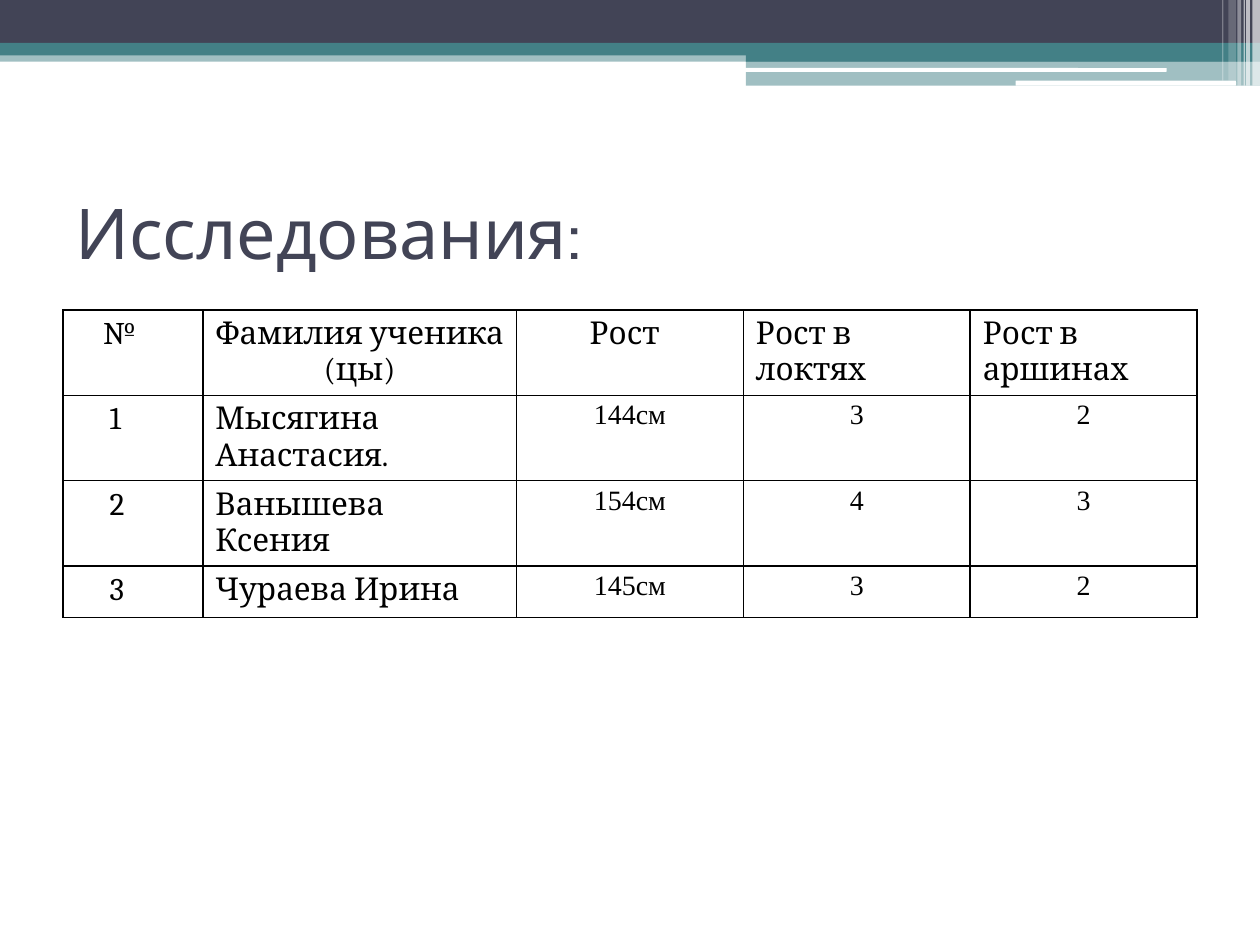
from lxml import etree
from pptx import Presentation
from pptx.dml.color import RGBColor
from pptx.enum.shapes import MSO_SHAPE
from pptx.enum.text import MSO_ANCHOR, PP_ALIGN
from pptx.oxml.ns import qn
from pptx.util import Inches, Pt

RECT, ROUND = MSO_SHAPE.RECTANGLE, MSO_SHAPE.ROUNDED_RECTANGLE
LEFT, CENTER = PP_ALIGN.LEFT, PP_ALIGN.CENTER
MIDDLE = MSO_ANCHOR.MIDDLE
GRID = Inches(0.25)
NAVY, TEAL, WHITE, BLACK = "424456", "438086", "FFFFFF", "000000"

HEADER_COLUMNS, HEADER_ROWS = 100, 68
BANDS = [
    (RECT, 0, 40, 100, 9, TEAL, 50),
    (RECT, 0, 0, 100, 34, NAVY, 100),
    (RECT, 0, 34, 100, 10, TEAL, 100),
    (RECT, 59.2, 39, 40.8, 10, TEAL, 100),
    (RECT, 59.2, 48, 40.8, 20, TEAL, 50),
    (ROUND, 59.1, 54, 33.5, 3, WHITE, 100),
    (ROUND, 80.6, 64, 17.5, 4, WHITE, 100),
]
STRIPES = [
    (99.4, 0.6, 68, 65), (98.9, 0.3, 68, 65), (98.7, 0.1, 68, 60),
    (98.2, 0.3, 68, 40), (97.5, 0.6, 64, 20), (97, 0.1, 64, 30),
]

COLUMN_WIDTHS = [1.11, 2.49, 1.8, 1.8, 1.8]
ROW_HEIGHTS = [0.58, 0.41, 0.41, 0.41]
HEADINGS = ["№", "Фамилия ученика (цы)", "Рост", "Рост в локтях", "Рост в аршинах"]
HEADING_INSETS = [0.32, 0.1, 0.58, 0.1, 0.1]
PUPILS = [
    ["1", "Мысягина Анастасия.", "144см", "3", "2"],
    ["2", "Ванышева Ксения", "154см", "4", "3"],
    ["3", "Чураева Ирина", "145см", "3", "2"],
]
PUPIL_INSETS = [0.37, 0.1, 0.07, 0.07, 0.07]


def color(value):
    return RGBColor.from_string(value)


def grid_box(*cells):
    return [int(cell * GRID) for cell in cells]


def add_span(para, text, font, size, tint):
    span = para.add_run()
    span.text = text
    span.font.name = font
    span.font.size = Pt(size)
    span.font.color.rgb = color(tint)
    return span


def add_band(page, box, kind, column, row, columns, rows, tint, opacity):
    left, top, width, height = box
    unit_x, unit_y = width / HEADER_COLUMNS, height / HEADER_ROWS
    band = page.shapes.add_shape(
        kind, int(left + column * unit_x), int(top + row * unit_y),
        int(columns * unit_x), int(rows * unit_y))
    band.shadow.inherit = False
    band.line.fill.background()
    band.fill.solid()
    band.fill.fore_color.rgb = color(tint)
    if opacity < 100:
        tint_node = next(band.fill._xPr.iter(qn("a:srgbClr")))
        etree.SubElement(tint_node, qn("a:alpha"), val=str(opacity * 1000))


def add_header(page, box):
    for band in BANDS:
        add_band(page, box, *band)
    for column, columns, rows, opacity in STRIPES:
        add_band(page, box, RECT, column, 0, columns, rows, WHITE, opacity)


def add_title(page, box):
    title = page.shapes.title
    title.left, title.top, title.width, title.height = box
    frame = title.text_frame
    frame.vertical_anchor = MIDDLE
    para = frame.paragraphs[0]
    para.alignment = LEFT
    add_span(para, "Исследования:", "Cabin", 40, NAVY)


def add_borders(cell):
    properties = cell._tc.get_or_add_tcPr()
    for index, side in enumerate(("lnL", "lnR", "lnT", "lnB")):
        line = etree.Element(qn(f"a:{side}"), w=str(Pt(1)))
        fill = etree.SubElement(line, qn("a:solidFill"))
        etree.SubElement(fill, qn("a:srgbClr"), val=BLACK)
        properties.insert(index, line)


def fill_cell(cell, text, inset, is_measure, is_name_heading):
    cell.fill.background()
    add_borders(cell)
    cell.margin_left = Inches(inset)
    para = cell.text_frame.paragraphs[0]
    para.alignment = CENTER if is_measure or is_name_heading else LEFT
    if is_measure:
        cell.margin_right = Inches(inset)
        cell.margin_top = cell.margin_bottom = 0
        para.line_spacing = 1.15
        add_span(para, text, "Times New Roman", 16, BLACK)
    elif is_name_heading:
        start, ending = text.rsplit(" ", 1)
        add_span(para, start, "Cambria", 18, BLACK)
        gap = add_span(para, " ", "Cambria", 18, BLACK)
        gap.font._element.set("spc", "2000")
        add_span(para, ending, "Cambria", 18, BLACK)
    else:
        add_span(para, text, "Cambria", 18, BLACK)


def add_height_table(page, box):
    rows = [HEADINGS] + PUPILS
    table = page.shapes.add_table(len(rows), len(HEADINGS), *box).table
    table.first_row = table.horz_banding = False
    for column, share in zip(table.columns, COLUMN_WIDTHS):
        column.width = int(box[2] * share / sum(COLUMN_WIDTHS))
    for row, height in zip(table.rows, ROW_HEIGHTS):
        row.height = Inches(height)
    for r, texts in enumerate(rows):
        insets = PUPIL_INSETS if r else HEADING_INSETS
        for c, (text, inset) in enumerate(zip(texts, insets)):
            fill_cell(table.cell(r, c), text, inset, r > 0 and c > 1, r == 0 and c == 1)


def main():
    deck = Presentation()
    deck.slide_width, deck.slide_height = grid_box(40, 30)
    page = deck.slides.add_slide(deck.slide_layouts[5])
    add_header(page, grid_box(0, 0, 40, 2.72))
    add_title(page, grid_box(2, 5, 36, 4.68))
    add_height_table(page, grid_box(2, 9.84, 36, 8.84))
    deck.save("out.pptx")


if __name__ == "__main__":
    main()
